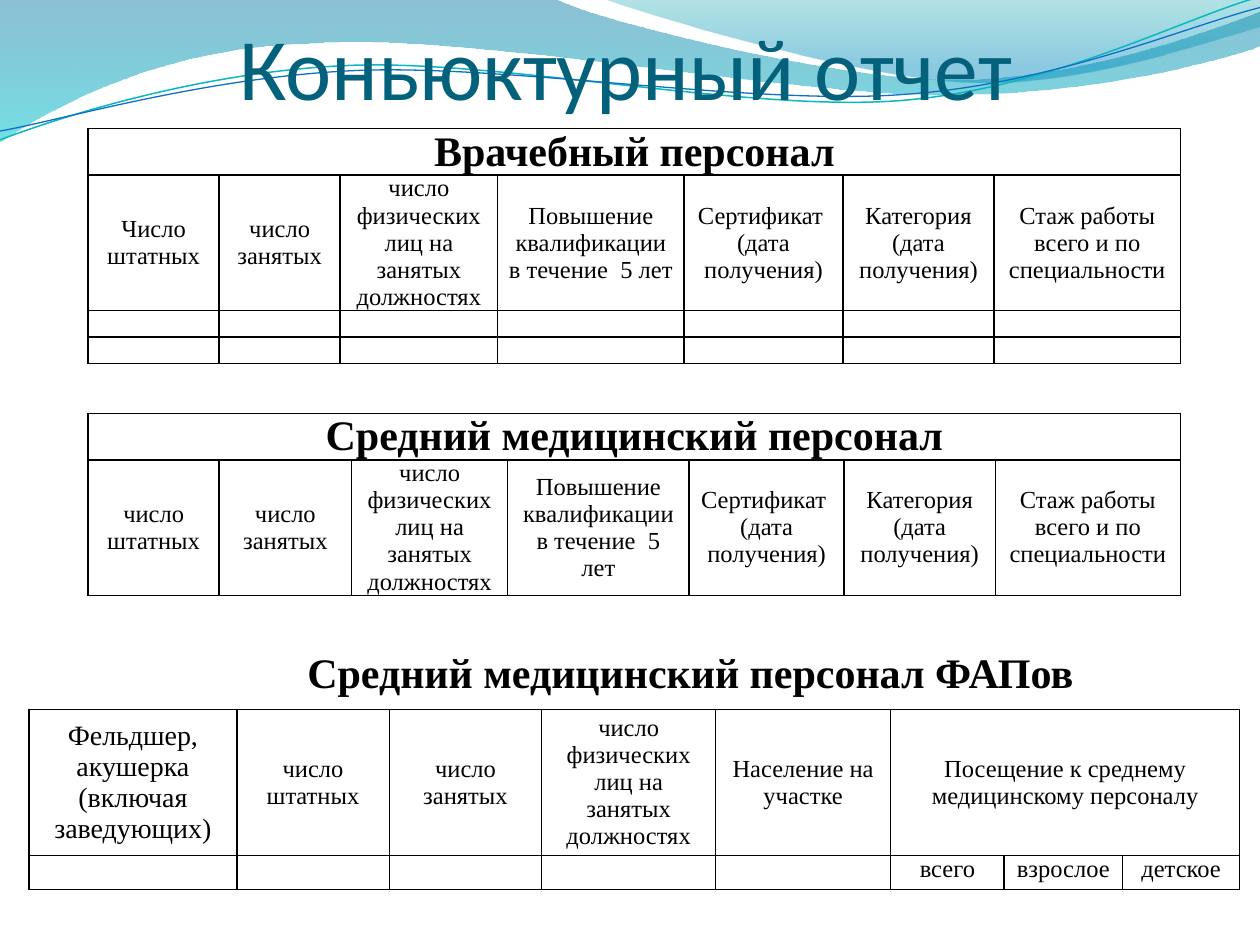
from lxml.etree import SubElement
from pptx import Presentation
from pptx.dml.color import RGBColor
from pptx.enum.text import MSO_ANCHOR, PP_ALIGN
from pptx.oxml.ns import qn
from pptx.util import Inches, Pt

SERIF = "Times New Roman"
BLACK = "000000"
UNITS = 100
TITLE = "Коньюктурный отчет"
CAPTION = "Средний медицинский персонал ФАПов"
PHYSICAL = "число физических лиц на занятых должностях"
OCCUPIED = "число занятых"
STAFF = "число штатных"
SHARED = [
    OCCUPIED,
    PHYSICAL,
    "Повышение квалификации в течение  5 лет",
    "Сертификат  (дата получения)",
    "Категория (дата получения)",
    "Стаж работы всего и по специальности",
]
TABLES = [
    {
        "left": 0.7, "top": 1.02,
        "columns": [1.04, 0.96, 1.25, 1.48, 1.26, 1.2, 1.48],
        "rows": [0.37, 1.07, 0.21, 0.21],
        "cells": [["Врачебный персонал"], ["Число\nштатных"] + SHARED, [], []],
        "merge": (0, 0, 6), "sizes": {(0, 0): 24},
    },
    {
        "left": 0.7, "top": 3.28,
        "columns": [1.04, 1.05, 1.24, 1.44, 1.23, 1.2, 1.47],
        "rows": [0.37, 1.07],
        "cells": [["Средний медицинский персонал"], [STAFF] + SHARED],
        "merge": (0, 0, 6), "sizes": {(0, 0): 24},
    },
    {
        "left": 0.23, "top": 5.63,
        "columns": [1.65, 1.21, 1.21, 1.38, 1.39, 0.9, 0.94, 0.93],
        "rows": [1.16, 0.27],
        "cells": [
            ["Фельдшер, акушерка (включая заведующих)", STAFF, OCCUPIED, PHYSICAL,
             "Население на участке", "Посещение к среднему медицинскому персоналу"],
            ["", "", "", "", "", "всего", "взрослое", "детское"],
        ],
        "merge": (0, 5, 7), "sizes": {(0, 0): 16}, "top_row": 1,
    },
]
BANDS = [
    ([(0, 0), (4.4, -0.01),
      (4.76, 0.17, 6.64, 0.63, 7.58, 0.63), (8.53, 0.63, 9.58, 0.26, 10, 0.09),
      (10.01, 0.36), (9.83, 0.44, 8.7, 0.76, 7.46, 0.75),
      (6.22, 0.75, 3.82, 0.28, 2.57, 0.34), (1.29, 0.36, 0.46, 0.83, -0.01, 1.13)],
     [(0, "0074A1", 45), (1, "00C6CF", 55)]),
    ([(4.79, -0.01), (5.09, 0.11, 6.82, 0.62, 7.69, 0.65),
      (8.56, 0.69, 9.61, 0.32, 10, 0.21), (10, 0)],
     [(0, "00A1A9", 30), (0.8, "008BBF", 45)]),
]
WAVES = [
    ([(0, 1.11), (0.48, 0.93, 1.58, 0.57, 2.77, 0.52),
      (3.95, 0.47, 5.93, 0.89, 7.13, 0.8), (8.33, 0.71, 9.38, 0.15, 9.98, -0.02)],
     "0AB8BF", 0.85),
    ([(0, 1.04), (0.47, 0.96, 1.64, 0.61, 2.83, 0.56),
      (4.03, 0.51, 5.97, 0.84, 7.17, 0.75), (8.36, 0.67, 9.41, 0.21, 10, 0.06)],
     "0F6FC6", 0.75),
]


def color(value):
    """Turn a hex string into a colour."""
    return RGBColor.from_string(value)


def add_curve(slide, segments, close):
    """Draw a freeform whose six-number segments are Bezier curves."""
    scaled = [[round(number * UNITS) for number in segment] for segment in segments]
    anchors = [segment[-2:] for segment in scaled]
    left, top = (min(values) for values in zip(*anchors))
    builder = slide.shapes.build_freeform(*anchors[0], scale=Inches(1) / UNITS)
    builder.add_line_segments(anchors[1:], close=close)
    shape = builder.convert_to_shape()
    shape.shadow.inherit = False
    lines = list(shape._element.iter(qn("a:lnTo")))
    for line, segment in zip(lines, scaled[1:]):
        if len(segment) == 6:
            line.tag = qn("a:cubicBezTo")
            line.remove(line[0])
            for x, y in zip(segment[::2], segment[1::2]):
                SubElement(line, qn("a:pt"), x=str(x - left), y=str(y - top))
    return shape


def add_band(slide, segments, stops):
    """Add a translucent gradient band."""
    shape = add_curve(slide, segments, True)
    shape.line.fill.background()
    shape.fill.gradient()
    shape.fill.gradient_angle = 270
    for stop, (position, value, _) in zip(shape.fill.gradient_stops, stops):
        stop.position = position
        stop.color.rgb = color(value)
    for element, (_, _, opacity) in zip(shape._element.iter(qn("a:gs")), stops):
        SubElement(element[0], qn("a:alpha"), val=str(opacity * 1000))


def add_wave(slide, segments, value, width):
    """Add a thin wavy line."""
    shape = add_curve(slide, segments, False)
    shape.fill.background()
    shape.line.color.rgb = color(value)
    shape.line.width = Pt(width)


def write(text_frame, text, size, font, value, bold=False, align=PP_ALIGN.CENTER):
    """Set and format the text of a frame."""
    text_frame.text = text
    for paragraph in text_frame.paragraphs:
        paragraph.alignment = align
        for run in paragraph.runs:
            run.font.size = Pt(size)
            run.font.name = font
            run.font.bold = bold
            run.font.color.rgb = color(value)


def format_cell(cell):
    """Give a cell its margins, thin black borders and no fill."""
    cell.margin_left = cell.margin_right = Inches(0.08)
    cell.margin_top = cell.margin_bottom = 0
    properties = cell._tc.get_or_add_tcPr()
    for side in ("lnL", "lnR", "lnT", "lnB"):
        line = SubElement(properties, qn(f"a:{side}"), w=str(Pt(1)))
        fill = SubElement(line, qn("a:solidFill"))
        SubElement(fill, qn("a:srgbClr"), val=BLACK)
    cell.fill.background()


def add_staff_table(slide, data):
    """Build one staff table with its merged heading."""
    columns, rows = data["columns"], data["rows"]
    table = slide.shapes.add_table(
        len(rows), len(columns), Inches(data["left"]), Inches(data["top"]),
        Inches(sum(columns)), Inches(sum(rows))).table
    table.first_row = table.horz_banding = False
    for column, width in zip(table.columns, columns):
        column.width = Inches(width)
    row, first, last = data["merge"]
    table.cell(row, first).merge(table.cell(row, last))
    for i, (height, texts) in enumerate(zip(rows, data["cells"])):
        table.rows[i].height = Inches(height)
        for j in range(len(columns)):
            cell = table.cell(i, j)
            format_cell(cell)
            top = i == data.get("top_row")
            cell.vertical_anchor = MSO_ANCHOR.TOP if top else MSO_ANCHOR.MIDDLE
            text = texts[j] if j < len(texts) else ""
            size = data["sizes"].get((i, j), 14)
            if text:
                write(cell.text_frame, text, size, SERIF, BLACK, size == 24)
            else:
                paragraph = cell.text_frame.paragraphs[0]._p
                SubElement(paragraph, qn("a:endParaRPr"), sz="1200")


def main():
    """Build the slide and save it."""
    presentation = Presentation()
    presentation.slide_width, presentation.slide_height = Inches(10), Inches(7.5)
    slide = presentation.slides.add_slide(presentation.slide_layouts[5])
    for segments, stops in BANDS:
        add_band(slide, segments, stops)
    for segments, value, width in WAVES:
        add_wave(slide, segments, value, width)

    title = slide.shapes.title
    slide.shapes._spTree.append(title._element)
    title.left, title.top, title.width, title.height = map(Inches, (0.47, 0, 9, 0.94))
    frame = title.text_frame
    frame.margin_left = frame.margin_right = frame.margin_bottom = 0
    frame.margin_top = Inches(0.05)
    frame.vertical_anchor = MSO_ANCHOR.BOTTOM
    write(frame, TITLE, 50, "Calibri", "04617B")

    for data in TABLES:
        add_staff_table(slide, data)
    caption = slide.shapes.add_textbox(*map(Inches, (2.34, 5.08, 6.35, 0.5)))
    write(caption.text_frame, CAPTION, 24, SERIF, BLACK, True, PP_ALIGN.LEFT)
    presentation.save("out.pptx")


if __name__ == "__main__":
    main()
